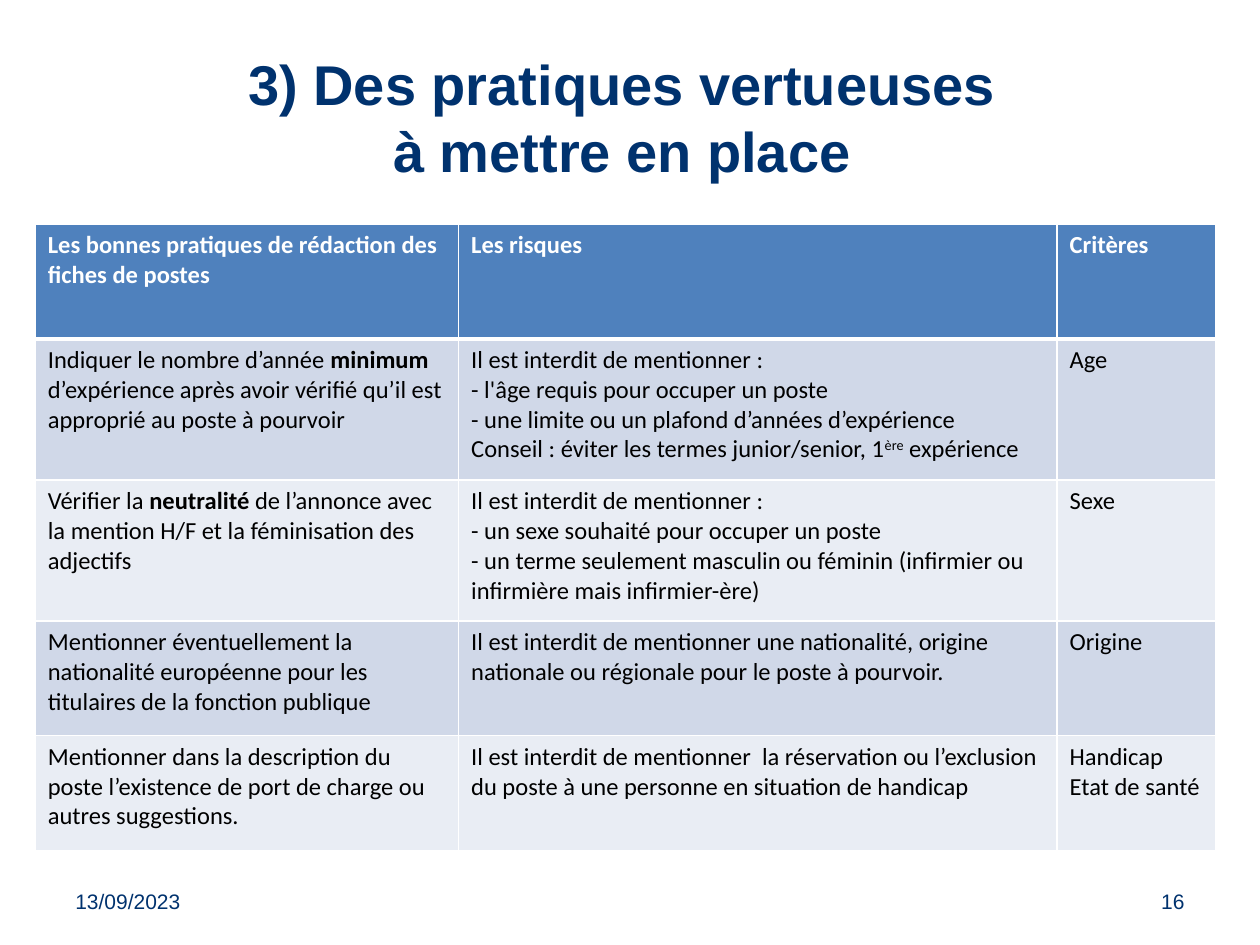
from lxml import etree
from pptx import Presentation
from pptx.dml.color import RGBColor
from pptx.enum.text import MSO_ANCHOR as Anchor, PP_ALIGN as Align
from pptx.oxml import parse_xml
from pptx.oxml.ns import nsdecls, qn
from pptx.util import Inches, Pt

NAVY, WHITE, BLACK = "00326E", "FFFFFF", "000000"
HEADER_FILL, BAND_FILLS = "4F81BD", ("D0D8E8", "E9EDF4")

COLUMN_WIDTHS = (3.36, 4.75, 1.26)
ROW_HEIGHTS = (0.91, 1.12, 1.12, 0.91, 0.91)

# Each cell is a list of paragraphs; "*" encloses bold text, "^" superscript
ROWS = [
    (["Les bonnes pratiques de rédaction des fiches de postes"],
     ["Les risques"],
     ["Critères"]),
    (["Indiquer le nombre d’année *minimum* d’expérience après avoir vérifié "
      "qu’il est approprié au poste à pourvoir"],
     ["Il est interdit de mentionner :",
      "- l'âge requis pour occuper un poste",
      "- une limite ou un plafond d’années d’expérience",
      "Conseil : éviter les termes junior/senior, 1^ère^ expérience"],
     ["Age"]),
    (["Vérifier la *neutralité *de l’annonce avec la mention H/F et la "
      "féminisation des adjectifs"],
     ["Il est interdit de mentionner :",
      "- un sexe souhaité pour occuper un poste",
      "- un terme seulement masculin ou féminin (infirmier ou infirmière "
      "mais infirmier-ère)"],
     ["Sexe"]),
    (["Mentionner éventuellement la nationalité européenne pour les "
      "titulaires de la fonction publique"],
     ["Il est interdit de mentionner une nationalité, origine nationale ou "
      "régionale pour le poste à pourvoir."],
     ["Origine"]),
    (["Mentionner dans la description du poste l’existence de port de charge "
      "ou autres suggestions."],
     ["Il est interdit de mentionner  la réservation ou l’exclusion du poste "
      "à une personne en situation de handicap"],
     ["Handicap", "Etat de santé"]),
]


def color(value):
    return RGBColor.from_string(value)


def style(span, name, size, value, bold=False):
    font = span.font
    font.name, font.size, font.bold = name, Pt(size), bold
    font.color.rgb = color(value)


def place(shape, box):
    shape.left, shape.top, shape.width, shape.height = map(Inches, box)


def add_title(page, box, text):
    title = page.shapes.title
    place(title, box)
    frame = title.text_frame
    frame.text = text
    frame.word_wrap = True
    frame.vertical_anchor = Anchor.MIDDLE
    para = frame.paragraphs[0]
    para.alignment = Align.CENTER
    for span in para.runs:
        style(span, "Arial", 32, NAVY, True)


def add_footer(page, box, text, alignment):
    frame = page.shapes.add_textbox(*map(Inches, box)).text_frame
    frame.text = text
    frame.word_wrap = True
    frame.vertical_anchor = Anchor.MIDDLE
    para = frame.paragraphs[0]
    para.alignment = alignment
    style(para.runs[0], "Arial", 12, NAVY)


def set_borders(cell, top, bottom):
    """Draw white borders; they must precede the fill in the cell properties."""
    properties = cell._tc.get_or_add_tcPr()
    widths = {"lnL": 1, "lnR": 1, "lnT": top, "lnB": bottom}
    for index, (tag, width) in enumerate(widths.items()):
        line = parse_xml(f'<a:{tag} {nsdecls("a")} w="{Pt(width)}"/>')
        fill = etree.SubElement(line, qn("a:solidFill"))
        etree.SubElement(fill, qn("a:srgbClr"), val=WHITE)
        properties.insert(index, line)


def write_cell(cell, lines, value, bold):
    frame = cell.text_frame
    for index, line in enumerate(lines):
        para = frame.add_paragraph() if index else frame.paragraphs[0]
        for bold_index, part in enumerate(line.split("*")):
            for raised_index, text in enumerate(part.split("^")):
                span = para.add_run()
                span.text = text
                style(span, "Calibri", 14, value, bold or bold_index % 2 == 1)
                if raised_index % 2:
                    span._r.get_or_add_rPr().set("baseline", "30000")


def add_practices_table(page, box):
    table = page.shapes.add_table(
        len(ROWS), len(COLUMN_WIDTHS), *map(Inches, box)).table
    for column, width in zip(table.columns, COLUMN_WIDTHS):
        column.width = Inches(width)
    for index, (row, height) in enumerate(zip(table.rows, ROW_HEIGHTS)):
        row.height = Inches(height)
        header = index == 0
        fill = HEADER_FILL if header else BAND_FILLS[(index - 1) % 2]
        for cell, lines in zip(row.cells, ROWS[index]):
            cell.fill.solid()
            cell.fill.fore_color.rgb = color(fill)
            set_borders(cell, 3 if index == 1 else 1, 3 if header else 1)
            write_cell(cell, lines, WHITE if header else BLACK, header)


def main():
    deck = Presentation()
    deck.slide_width, deck.slide_height = Inches(10), Inches(7.5)
    page = deck.slides.add_slide(deck.slide_layouts.get_by_name("Title Only"))

    add_title(page, (0.5, 0.3, 9, 1.25),
              "3) Des pratiques vertueuses \và mettre en place ")
    add_practices_table(page, (0.28, 1.78, sum(COLUMN_WIDTHS), sum(ROW_HEIGHTS)))

    # Date and page number
    add_footer(page, (0.5, 6.95, 2.33, 0.4), "13/09/2023", Align.LEFT)
    add_footer(page, (7.17, 6.95, 2.33, 0.4), "16", Align.RIGHT)

    deck.save("out.pptx")


if __name__ == "__main__":
    main()
